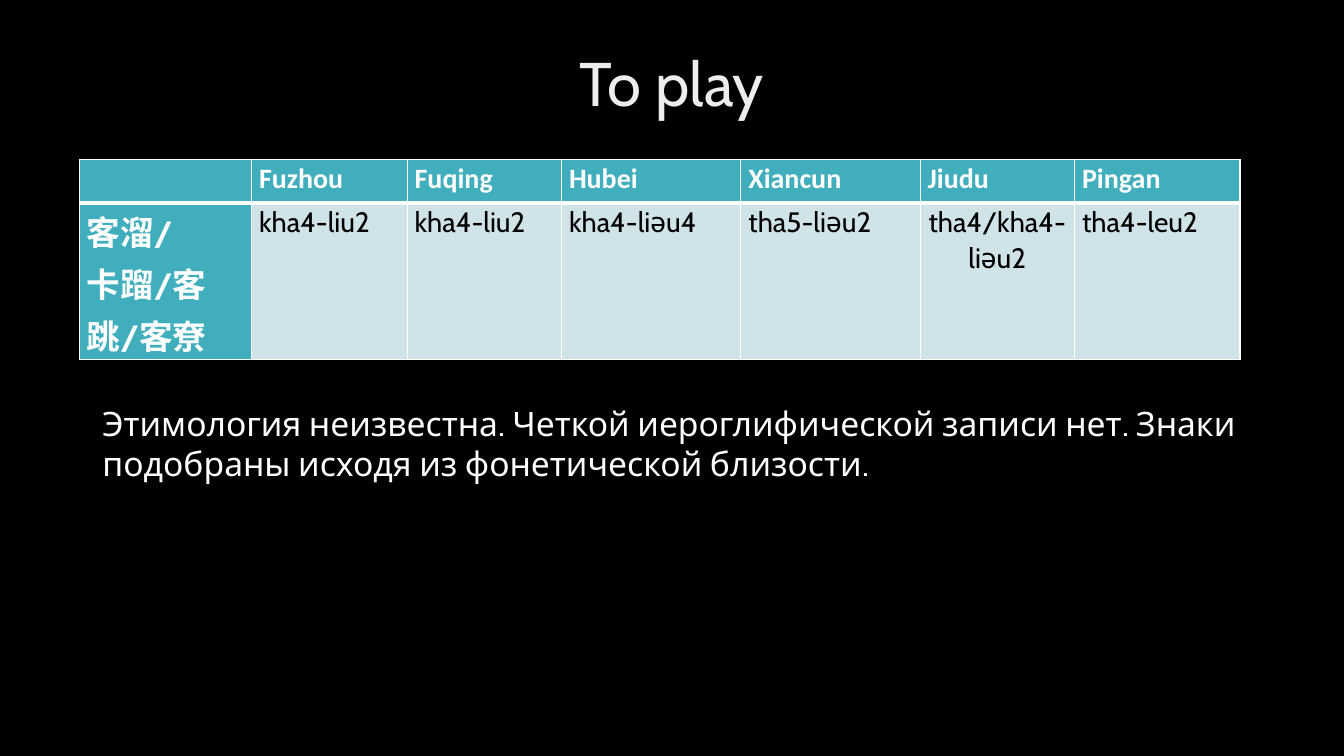
import pptx
import pptx.dml.color
import pptx.enum.text
import pptx.oxml
import pptx.oxml.ns
import pptx.util

Cm = pptx.util.Cm
Pt = pptx.util.Pt
RGBColor = pptx.dml.color.RGBColor
ALIGN = pptx.enum.text.PP_ALIGN
ANCHOR = pptx.enum.text.MSO_ANCHOR

BLACK = RGBColor(0x00, 0x00, 0x00)
WHITE = RGBColor(0xFF, 0xFF, 0xFF)
TEAL = RGBColor(0x41, 0xAE, 0xBD)
PALE_TEAL = RGBColor(0xCF, 0xE3, 0xE8)
TITLE_STOPS = [
    (0, RGBColor(0xBF, 0xBF, 0xBF)),
    (28, RGBColor(0xED, 0xED, 0xED)),
    (100, WHITE),
]
TITLE_ANGLE = 80

COLUMN_WIDTHS = [4.34, 3.92, 3.89, 4.52, 4.52, 3.89, 4.17]
ROW_HEIGHTS = [1.09, 3.63]
DIALECT_ROWS = [
    ["", "Fuzhou", "Fuqing", "Hubei", "Xiancun", "Jiudu", "Pingan"],
    ["客溜/\n卡蹓/客跳/客尞", "kha4-liu2", "kha4-liu2", "kha4-liəu4",
     "tha5-liəu2", "tha4/kha4-liəu2", "tha4-leu2"],
]
CENTRED_CELL = (1, 5)
HEADER_FORMAT = {"name": "Calibri", "size": Pt(20), "bold": True}
WORD_FORMAT = {"name": "Cabin", "size": Pt(24), "bold": True}
READING_FORMAT = {"name": "Cabin", "size": Pt(20), "bold": False}
NOTE_FORMAT = {"name": "Cabin", "size": Pt(24)}
TITLE_FORMAT = {"name": "Cabin", "size": Pt(44), "bold": False}
NOTE_TEXT = ("Этимология неизвестна. Четкой иероглифической записи нет. "
             "Знаки подобраны исходя из фонетической близости.")


def set_values(target, values):
    for name, value in values.items():
        setattr(target, name, value)


def write_text(frame, text, font_format, color, **para_format):
    for index, line in enumerate(text.split("\n")):
        para = frame.add_paragraph() if index else frame.paragraphs[0]
        set_values(para, para_format)
        span = para.add_run()
        span.text = line
        set_values(span.font, font_format)
        span.font.color.rgb = color


def apply_gradient(span, stops, angle):
    properties = span._r.get_or_add_rPr()
    for solid in properties.findall(pptx.oxml.ns.qn("a:solidFill")):
        properties.remove(solid)
    stop_xml = "".join(
        f'<a:gs pos="{position * 1000}"><a:srgbClr val="{color}"/></a:gs>'
        for position, color in stops)
    properties.insert(0, pptx.oxml.parse_xml(
        f'<a:gradFill {pptx.oxml.ns.nsdecls("a")}><a:gsLst>{stop_xml}</a:gsLst>'
        f'<a:lin ang="{angle * 60000}" scaled="0"/></a:gradFill>'))


def set_borders(cell, widths):
    properties = cell._tc.get_or_add_tcPr()
    for index, (side, width) in enumerate(widths.items()):
        properties.insert(index, pptx.oxml.parse_xml(
            f'<a:ln{side} {pptx.oxml.ns.nsdecls("a")} w="{Pt(width)}">'
            f'<a:solidFill><a:srgbClr val="{WHITE}"/></a:solidFill></a:ln{side}>'))


def add_title(page, left, top, width, height):
    title = page.shapes.title
    set_values(title, {"left": left, "top": top, "width": width, "height": height})
    frame = title.text_frame
    set_values(frame, {"vertical_anchor": ANCHOR.MIDDLE, "word_wrap": True})
    write_text(frame, "To play", TITLE_FORMAT, WHITE,
               alignment=ALIGN.CENTER, line_spacing=0.9)
    apply_gradient(frame.paragraphs[0].runs[0], TITLE_STOPS, TITLE_ANGLE)


def add_dialect_table(page, left, top):
    table = page.shapes.add_table(
        len(ROW_HEIGHTS), len(COLUMN_WIDTHS), left, top,
        Cm(sum(COLUMN_WIDTHS)), Cm(sum(ROW_HEIGHTS))).table
    for column, width in zip(table.columns, COLUMN_WIDTHS):
        column.width = Cm(width)
    for row, height in zip(table.rows, ROW_HEIGHTS):
        row.height = Cm(height)

    for row, texts in enumerate(DIALECT_ROWS):
        for column, text in enumerate(texts):
            cell = table.cell(row, column)
            set_values(cell, {"margin_left": Cm(0.19), "margin_right": Cm(0.19),
                              "margin_top": 0, "margin_bottom": 0})
            is_reading = row > 0 and column > 0
            cell.fill.solid()
            cell.fill.fore_color.rgb = PALE_TEAL if is_reading else TEAL
            # A thick rule divides the header from the readings
            set_borders(cell, {"L": 1, "R": 1, "T": 3 if row else 1,
                               "B": 1 if row else 3})
            if row == 0:
                font_format = HEADER_FORMAT
            else:
                font_format = READING_FORMAT if is_reading else WORD_FORMAT
            centred = (row, column) == CENTRED_CELL
            if text:
                write_text(cell.text_frame, text, font_format,
                           BLACK if is_reading else WHITE, line_spacing=1.07,
                           alignment=ALIGN.CENTER if centred else ALIGN.LEFT)


def add_note(page, left, top, width, height):
    frame = page.shapes.add_textbox(left, top, width, height).text_frame
    set_values(frame, {"word_wrap": True,
                       "auto_size": pptx.enum.text.MSO_AUTO_SIZE.SHAPE_TO_FIT_TEXT})
    write_text(frame, NOTE_TEXT, NOTE_FORMAT, WHITE)


def main():
    deck = pptx.Presentation()
    set_values(deck, {"slide_width": Cm(33.87), "slide_height": Cm(19.05)})
    page = deck.slides.add_slide(deck.slide_layouts[5])
    page.background.fill.solid()
    page.background.fill.fore_color.rgb = BLACK

    # Title, dialect readings and etymology note
    add_title(page, Cm(2.33), Cm(1.02), Cm(29.21), Cm(2.31))
    add_dialect_table(page, Cm(2), Cm(4.02))
    add_note(page, Cm(2.33), Cm(10.03), Cm(29.67), Cm(2.31))
    deck.save("out.pptx")


if __name__ == "__main__":
    main()
